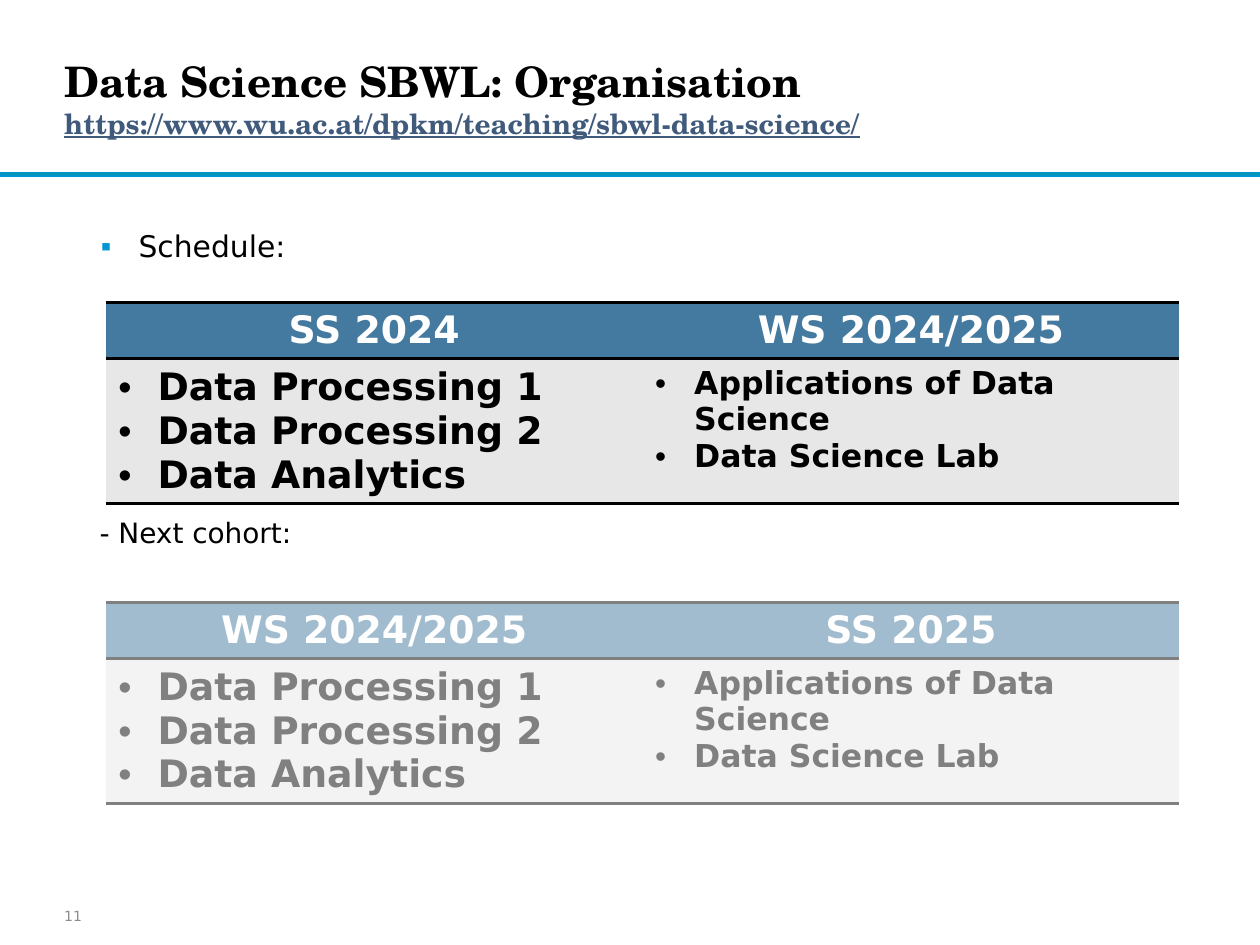
from dataclasses import dataclass

from lxml.etree import SubElement as add_element
from pptx import Presentation
from pptx.dml.color import RGBColor
from pptx.enum.shapes import MSO_SHAPE as Shape
from pptx.enum.text import MSO_ANCHOR as Anchor
from pptx.enum.text import MSO_AUTO_SIZE as AutoSize
from pptx.enum.text import PP_ALIGN as Align
from pptx.oxml.ns import qn
from pptx.util import Inches, Pt


@dataclass(frozen=True)
class Theme:
    heading_font: str = "TeX Gyre Schola"
    body_font: str = "DejaVu Sans"
    text: str = "000000"
    light: str = "FFFFFF"
    address: str = "405A7C"
    accent: str = "0096D3"
    rule: str = "0C94B7"
    header_fill: str = "457AA0"
    cell_fill: str = "E7E7E7"
    number: str = "8C8C8C"
    title_size: float = 24
    address_size: float = 16
    schedule_size: float = 17
    cohort_size: float = 16
    large_size: float = 21.6
    course_size: float = 18
    number_size: float = 8


THEME = Theme()


@dataclass(frozen=True)
class Semester:
    name: str
    courses: tuple[str, ...]
    size: float


@dataclass(frozen=True)
class Cohort:
    top: float
    semesters: tuple[Semester, ...]


FIRST_COURSES = ("Data Processing 1", "Data Processing 2", "Data Analytics")
SECOND_COURSES = ("Applications of Data Science", "Data Science Lab")


def make_cohort(top: float, first: str, second: str) -> Cohort:
    return Cohort(top, (
        Semester(first, FIRST_COURSES, THEME.large_size),
        Semester(second, SECOND_COURSES, THEME.course_size),
    ))


COHORTS = (
    make_cohort(2.4, "SS 2024", "WS 2024/2025"),
    make_cohort(4.78, "WS 2024/2025", "SS 2025"),
)


def write(para, text: str, *, size: float, color: str = THEME.text,
          font: str = THEME.body_font, bold: bool = False,
          underline: bool = False) -> None:
    """Add one formatted span to a paragraph."""
    span = para.add_run()
    span.text = text
    span.font.name = font
    span.font.size = Pt(size)
    span.font.bold = bold
    span.font.underline = underline
    span.font.color.rgb = RGBColor.from_string(color)


def set_indent(para, left: float, first: float, bullet: str = "",
               color: str = THEME.text) -> None:
    """Set the paragraph indent, with a bullet or with none."""
    props = para._p.get_or_add_pPr()
    props.set("marL", str(Inches(left)))
    props.set("indent", str(Inches(first)))
    if bullet:
        bullet_color = add_element(props, qn("a:buClr"))
        add_element(bullet_color, qn("a:srgbClr"), val=color)
        add_element(props, qn("a:buFont"), typeface="Arial")
        add_element(props, qn("a:buChar"), char=bullet)
    else:
        add_element(props, qn("a:buNone"))


def set_frame(frame, anchor: Anchor, vertical_margin: float) -> None:
    frame.word_wrap = True
    frame.auto_size = AutoSize.NONE
    frame.vertical_anchor = anchor
    frame.margin_left = frame.margin_right = 0
    frame.margin_top = frame.margin_bottom = Inches(vertical_margin)


def place(shape, left: float, top: float, width: float, height: float) -> None:
    shape.left, shape.top = Inches(left), Inches(top)
    shape.width, shape.height = Inches(width), Inches(height)


def add_box(page, left: float, top: float, width: float, height: float, fill: str):
    box = page.shapes.add_shape(Shape.RECTANGLE, Inches(left), Inches(top),
                                Inches(width), Inches(height))
    box.shadow.inherit = False
    box.fill.solid()
    box.fill.fore_color.rgb = RGBColor.from_string(fill)
    box.line.fill.background()
    return box


def style_cell(cell, fill: str) -> None:
    """Rule the cell above and below, then fill it."""
    props = cell._tc.get_or_add_tcPr()
    for side in ("a:lnT", "a:lnB"):
        line = add_element(props, qn(side), w=str(Pt(2)))
        line_fill = add_element(line, qn("a:solidFill"))
        add_element(line_fill, qn("a:srgbClr"), val=THEME.text)
    cell.fill.solid()
    cell.fill.fore_color.rgb = RGBColor.from_string(fill)


def add_cohort_table(page, cohort: Cohort) -> None:
    columns = len(cohort.semesters)
    table = page.shapes.add_table(2, columns, Inches(0.84), Inches(cohort.top),
                                  Inches(4.26 * columns), Inches(1.59)).table
    table.horz_banding = False
    # The plain table style has no grid of its own
    style = table._tbl.tblPr.find(qn("a:tableStyleId"))
    style.text = "{2D5ABB26-0587-4C30-8999-92F81FD0307C}"
    for row, height in zip(table.rows, (0.44, 1.15)):
        row.height = Inches(height)

    for column, semester in enumerate(cohort.semesters):
        header, body = table.cell(0, column), table.cell(1, column)
        style_cell(header, THEME.header_fill)
        style_cell(body, THEME.cell_fill)
        heading = header.text_frame.paragraphs[0]
        heading.alignment = Align.CENTER
        write(heading, semester.name, size=THEME.large_size,
              color=THEME.light, bold=True)
        frame = body.text_frame
        for index, course in enumerate(semester.courses):
            para = frame.add_paragraph() if index else frame.paragraphs[0]
            set_indent(para, 0.31, -0.31, "•")
            write(para, course, size=semester.size, bold=True)


def main() -> None:
    deck = Presentation()
    deck.slide_width, deck.slide_height = Inches(10), Inches(7.5)
    page = deck.slides.add_slide(deck.slide_layouts[1])

    # Rule under the title
    rule = add_box(page, 0, 1.37, 10, 0.03, THEME.rule)
    rule.line.color.rgb = RGBColor.from_string(THEME.accent)
    rule.line.width = Pt(1)

    # Title with the web address below it
    title = page.shapes.title
    place(title, 0.51, 0.18, 7.27, 1.19)
    set_frame(title.text_frame, Anchor.MIDDLE, 0)
    para = title.text_frame.paragraphs[0]
    para.alignment = Align.LEFT
    write(para, "Data Science SBWL: Organisation", size=THEME.title_size,
          font=THEME.heading_font, bold=True)
    para.add_line_break()
    write(para, "https://www.wu.ac.at/dpkm/teaching/sbwl-data-science/",
          size=THEME.address_size, color=THEME.address,
          font=THEME.heading_font, bold=True, underline=True)

    # Body lines, spaced to leave room for the first table
    body = page.placeholders[1]
    place(body, 0.51, 1.76, 8.49, 5.06)
    set_frame(body.text_frame, Anchor.TOP, 0.05)
    schedule = body.text_frame.paragraphs[0]
    set_indent(schedule, 0.59, -0.3, "▪", THEME.accent)
    schedule.space_before, schedule.space_after = Pt(0), Pt(4)
    write(schedule, "Schedule:", size=THEME.schedule_size)
    next_cohort = body.text_frame.add_paragraph()
    set_indent(next_cohort, 0.28, 0)
    next_cohort.space_before = Pt(140)
    write(next_cohort, "- Next cohort:", size=THEME.cohort_size)

    # Course tables
    for cohort in COHORTS:
        add_cohort_table(page, cohort)

    # Half-transparent veil over the next cohort
    veil = add_box(page, 0.33, 4.53, 9.54, 2.29, THEME.light)
    veil_color = veil._element.spPr.find(qn("a:solidFill")).find(qn("a:srgbClr"))
    add_element(veil_color, qn("a:alpha"), val="50000")

    # Page number
    number = page.shapes.add_textbox(Inches(0.51), Inches(7.1), Inches(0.98), Inches(0.34))
    set_frame(number.text_frame, Anchor.MIDDLE, 0.05)
    write(number.text_frame.paragraphs[0], "11", size=THEME.number_size, color=THEME.number)

    deck.save("out.pptx")


if __name__ == "__main__":
    main()
